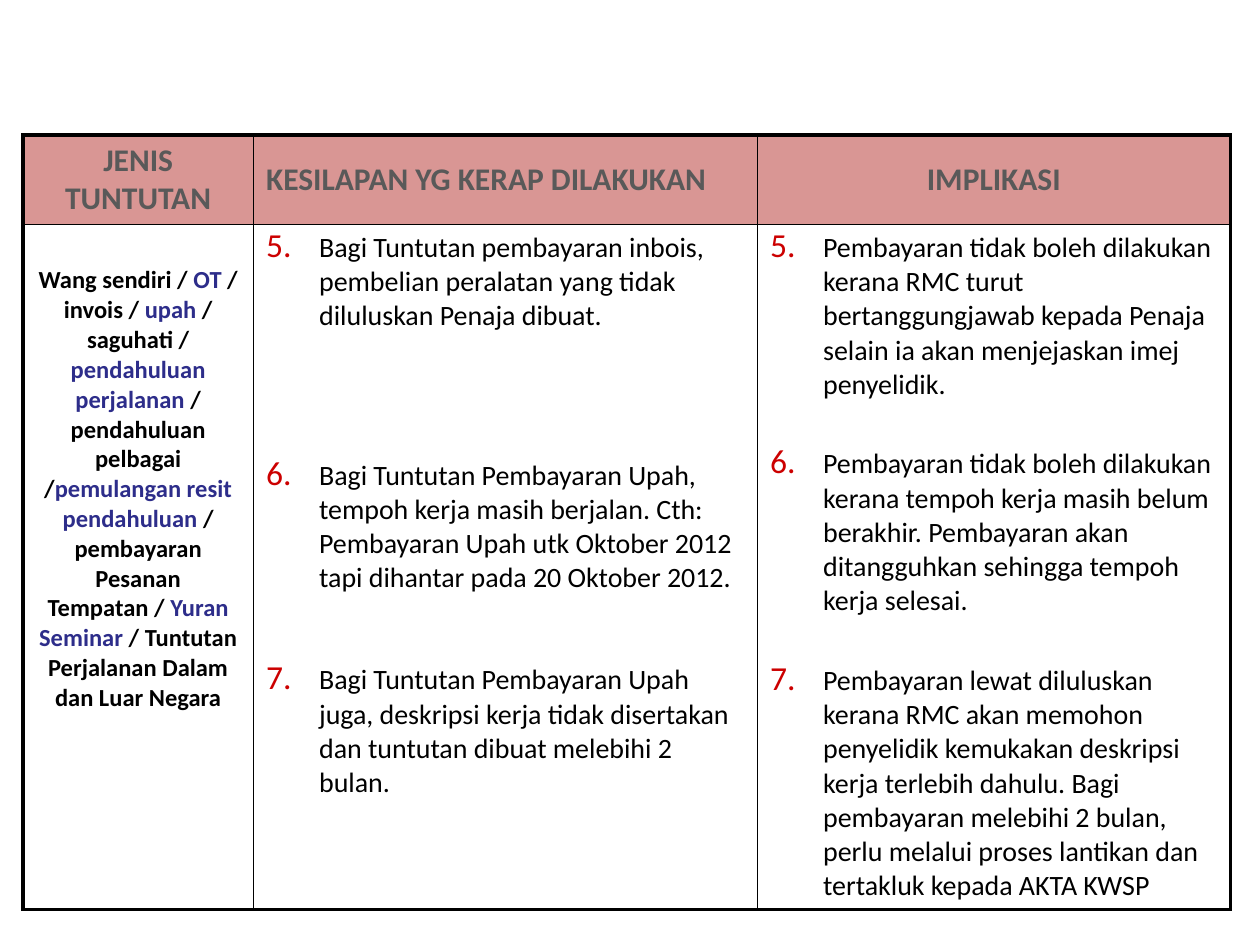
from lxml.etree import SubElement as Sub
from pptx import Presentation as Deck
from pptx.dml.color import RGBColor as Color
from pptx.enum.text import MSO_ANCHOR as Anchor, PP_ALIGN as Align
from pptx.oxml.ns import qn
from pptx.util import Cm, Pt

BLACK = Color(0x00, 0x00, 0x00)
WHITE = Color(0xFF, 0xFF, 0xFF)
GREY = Color(0x59, 0x59, 0x59)
ROSE = Color(0xD9, 0x96, 0x94)
BLUE = Color(0x2D, 0x2D, 0x8A)
RED = Color(0xCC, 0x00, 0x00)

WIDTHS = [4.65, 10.16, 9.53]
HEIGHTS = [1.78, 13.72]
HEADS = ["JENIS TUNTUTAN", "KESILAPAN YG KERAP DILAKUKAN", "IMPLIKASI"]
CLAIMS = [
    "Wang sendiri / ", "OT ", "/ invois / ", "upah ", "/ saguhati / ",
    "pendahuluan perjalanan ", "/ pendahuluan pelbagai /",
    "pemulangan resit pendahuluan ", "/ pembayaran Pesanan Tempatan / ",
    "Yuran Seminar ", "/ Tuntutan Perjalanan Dalam dan Luar Negara",
]
FAULTS = [
    "Bagi Tuntutan pembayaran inbois, pembelian peralatan yang tidak "
    "diluluskan Penaja dibuat.",
    "Bagi Tuntutan Pembayaran Upah, tempoh kerja masih berjalan. Cth: "
    "Pembayaran Upah utk Oktober 2012 tapi dihantar pada 20 Oktober 2012.",
    "Bagi Tuntutan Pembayaran Upah juga, deskripsi kerja tidak disertakan "
    "dan tuntutan dibuat melebihi 2 bulan.",
]
EFFECTS = [
    "Pembayaran tidak boleh dilakukan kerana RMC turut bertanggungjawab "
    "kepada Penaja selain ia akan menjejaskan imej penyelidik.",
    "Pembayaran tidak boleh dilakukan kerana tempoh kerja masih belum "
    "berakhir. Pembayaran akan ditangguhkan sehingga tempoh kerja selesai.",
    "Pembayaran lewat diluluskan kerana RMC akan memohon penyelidik "
    "kemukakan deskripsi kerja terlebih dahulu. Bagi pembayaran melebihi 2 "
    "bulan, perlu melalui proses lantikan dan tertakluk kepada AKTA KWSP",
]


def style(run, size, color, bold=False):
    font = run.font
    font.name = "Calibri"
    font.size = Pt(size)
    font.bold = bold
    font.color.rgb = color


def tint(node, color):
    fill = Sub(node, qn("a:solidFill"))
    Sub(fill, qn("a:srgbClr"), val=str(color))


def frame(cell, row, col):
    outer = {"L": col == 0, "R": col == len(WIDTHS) - 1,
             "T": row == 0, "B": row == len(HEIGHTS) - 1}
    props = cell._tc.get_or_add_tcPr()
    for side, edge in outer.items():
        width = Pt(2.25 if edge else 1)
        line = Sub(props, qn(f"a:ln{side}"), w=str(width))
        tint(line, BLACK)


def number(para):
    props = para._p.get_or_add_pPr()
    props.set("marL", str(Cm(1.07)))
    props.set("indent", str(-Cm(1.07)))
    tint_node = Sub(props, qn("a:buClr"))
    Sub(tint_node, qn("a:srgbClr"), val=str(RED))
    Sub(props, qn("a:buSzPct"), val="120000")
    Sub(props, qn("a:buFont"), typeface="+mj-lt")
    Sub(props, qn("a:buAutoNum"), type="arabicPeriod", startAt="5")


def add_head(cell, text, align):
    cell.vertical_anchor = Anchor.MIDDLE
    cell.text_frame.text = text
    para = cell.text_frame.paragraphs[0]
    para.alignment = align
    style(para.runs[0], 18, GREY, True)


def add_claims(cell):
    cell.margin_top = Cm(0.83)
    para = cell.text_frame.paragraphs[0]
    para.alignment = Align.CENTER
    for place, text in enumerate(CLAIMS):
        run = para.add_run()
        run.text = text
        style(run, 14, BLUE if place % 2 else BLACK, True)


def add_list(cell, items, gaps):
    box = cell.text_frame
    box.text = "\n".join(items)
    for para, gap in zip(box.paragraphs, [0, *gaps]):
        number(para)
        if gap:
            para.space_before = Pt(gap)
        style(para.runs[0], 16, BLACK)


def add_grid(slide):
    grid = slide.shapes.add_table(
        len(HEIGHTS), len(WIDTHS), Cm(0.46), Cm(2.72),
        Cm(sum(WIDTHS)), Cm(sum(HEIGHTS))).table
    grid.first_row = False
    grid.horz_banding = False
    for col, width in zip(grid.columns, WIDTHS):
        col.width = Cm(width)
    for row, height in zip(grid.rows, HEIGHTS):
        row.height = Cm(height)
    for row in range(len(HEIGHTS)):
        for col in range(len(WIDTHS)):
            cell = grid.cell(row, col)
            frame(cell, row, col)
            cell.fill.solid()
            cell.fill.fore_color.rgb = WHITE if row else ROSE
    return grid


def main():
    deck = Deck()
    deck.slide_width = Cm(25.4)
    deck.slide_height = Cm(19.05)
    slide = deck.slides.add_slide(deck.slide_layouts[6])
    grid = add_grid(slide)
    sides = [Align.CENTER, Align.LEFT, Align.CENTER]
    for col, (text, align) in enumerate(zip(HEADS, sides)):
        add_head(grid.cell(0, col), text, align)
    add_claims(grid.cell(1, 0))
    add_list(grid.cell(1, 1), FAULTS, [71.5, 38.7])
    add_list(grid.cell(1, 2), EFFECTS, [25.9, 25.9])
    deck.save("out.pptx")


if __name__ == "__main__":
    main()
